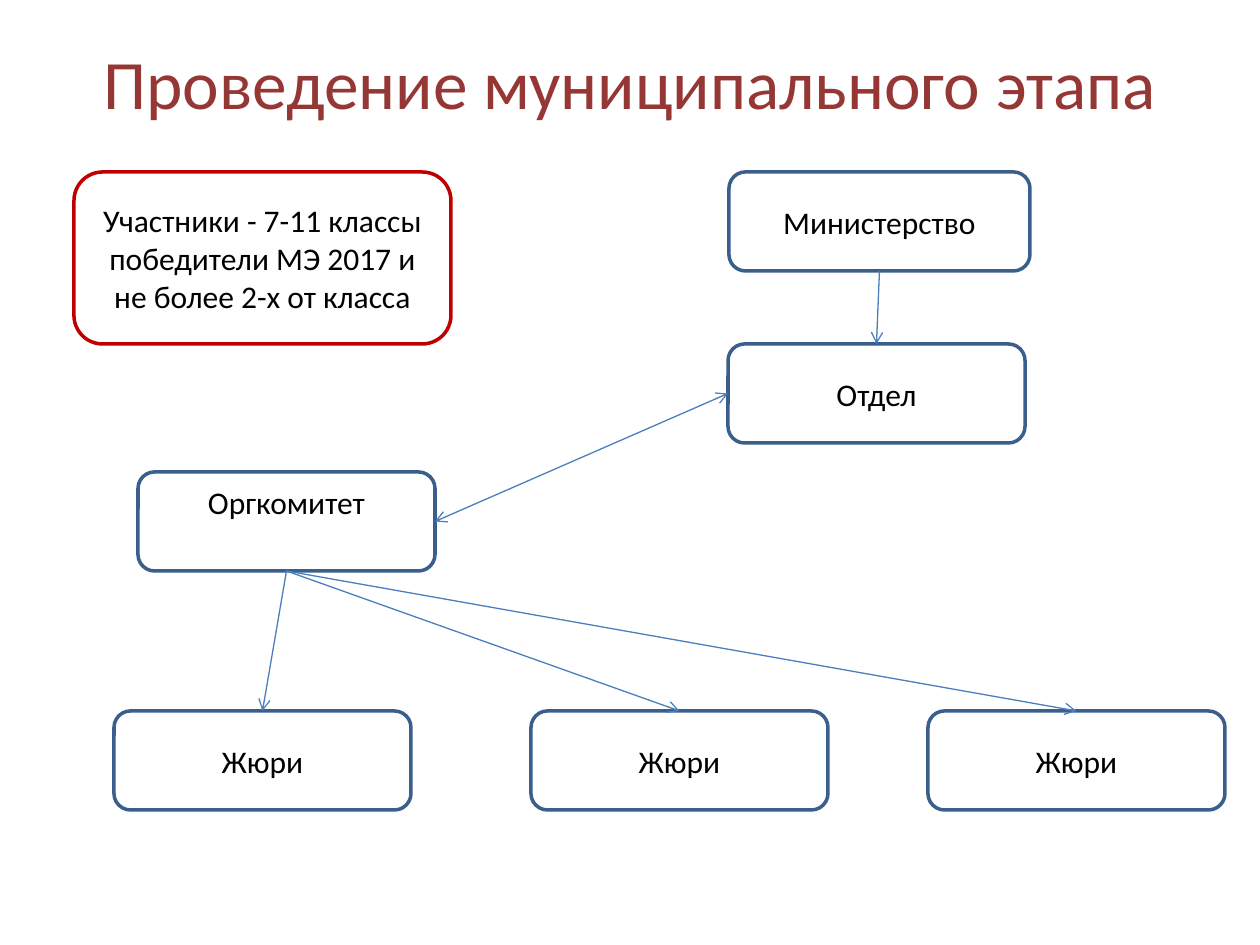
from lxml import etree
from pptx import Presentation
from pptx.dml.color import RGBColor
from pptx.enum import shapes, text
from pptx.oxml import ns
from pptx import util as u

EMU_PER_PX = 914400 / 126
TOP, LEFT, BOTTOM, RIGHT = range(4)  # connection sites of a rectangle


def px(length):
    return u.Emu(round(length * EMU_PER_PX))


def color(hex_string):
    return RGBColor.from_string(hex_string)


class Diagram:
    font = "Calibri"
    title_color = "953735"
    text_color = "000000"
    box_color = "3A5F8C"
    accent_color = "C00000"
    arrow_color = "4B7EBC"

    def __init__(self, slide):
        self.slide = slide

    def set_text(self, shape, wording, size, hex_string, anchor):
        frame = shape.text_frame
        frame.word_wrap = True
        frame.vertical_anchor = anchor
        frame.text = wording
        paragraph = frame.paragraphs[0]
        paragraph.alignment = text.PP_ALIGN.CENTER
        font = paragraph.runs[0].font
        font.name = self.font
        font.size = u.Pt(size)
        font.color.rgb = color(hex_string)

    def title(self, wording, left, top, width, height):
        shape = self.slide.shapes.add_textbox(px(left), px(top), px(width), px(height))
        self.set_text(shape, wording, 39.6, self.title_color, text.MSO_ANCHOR.MIDDLE)

    def box(self, wording, left, top, width=297, height=99,
            outline=box_color, anchor=text.MSO_ANCHOR.MIDDLE):
        shape = self.slide.shapes.add_shape(
            shapes.MSO_SHAPE.ROUNDED_RECTANGLE,
            px(left), px(top), px(width), px(height))
        shape.shadow.inherit = False
        shape.fill.background()
        shape.line.color.rgb = color(outline)
        shape.line.width = u.Pt(2)
        self.set_text(shape, wording, 18, self.text_color, anchor)
        return shape

    def arrow(self, start, start_site, end, end_site, both_ends=False):
        connector = self.slide.shapes.add_connector(
            shapes.MSO_CONNECTOR.STRAIGHT, 0, 0, 0, 0)
        connector.begin_connect(start, start_site)
        connector.end_connect(end, end_site)
        connector.line.color.rgb = color(self.arrow_color)
        connector.line.width = u.Pt(0.75)
        properties = connector._element.spPr
        line = properties.find(ns.qn("a:ln"))
        for tag in ("a:headEnd", "a:tailEnd") if both_ends else ("a:tailEnd",):
            etree.SubElement(line, ns.qn(tag), type="arrow")
        etree.SubElement(properties, ns.qn("a:effectLst"))


def main():
    presentation = Presentation()
    presentation.slide_width = px(1260)
    presentation.slide_height = px(945)
    diagram = Diagram(presentation.slides.add_slide(presentation.slide_layouts[6]))

    # Title and participants
    diagram.title("Проведение муниципального этапа", 63, 38, 1134, 87)
    diagram.box("Участники - 7-11 классы победители МЭ 2017 и не более 2-х от класса",
                74, 172, 377, 172, outline=diagram.accent_color)

    # Organising bodies
    ministry = diagram.box("Министерство", 729, 172, width=301)
    department = diagram.box("Отдел", 728, 344)
    committee = diagram.box("Оргкомитет", 138, 472, anchor=text.MSO_ANCHOR.TOP)
    juries = [diagram.box("Жюри", left, 711) for left in (114, 531, 928)]

    # Links between them
    diagram.arrow(ministry, BOTTOM, department, TOP)
    diagram.arrow(committee, RIGHT, department, LEFT, both_ends=True)
    for jury in juries:
        diagram.arrow(committee, BOTTOM, jury, TOP)

    presentation.save("out.pptx")


if __name__ == "__main__":
    main()
